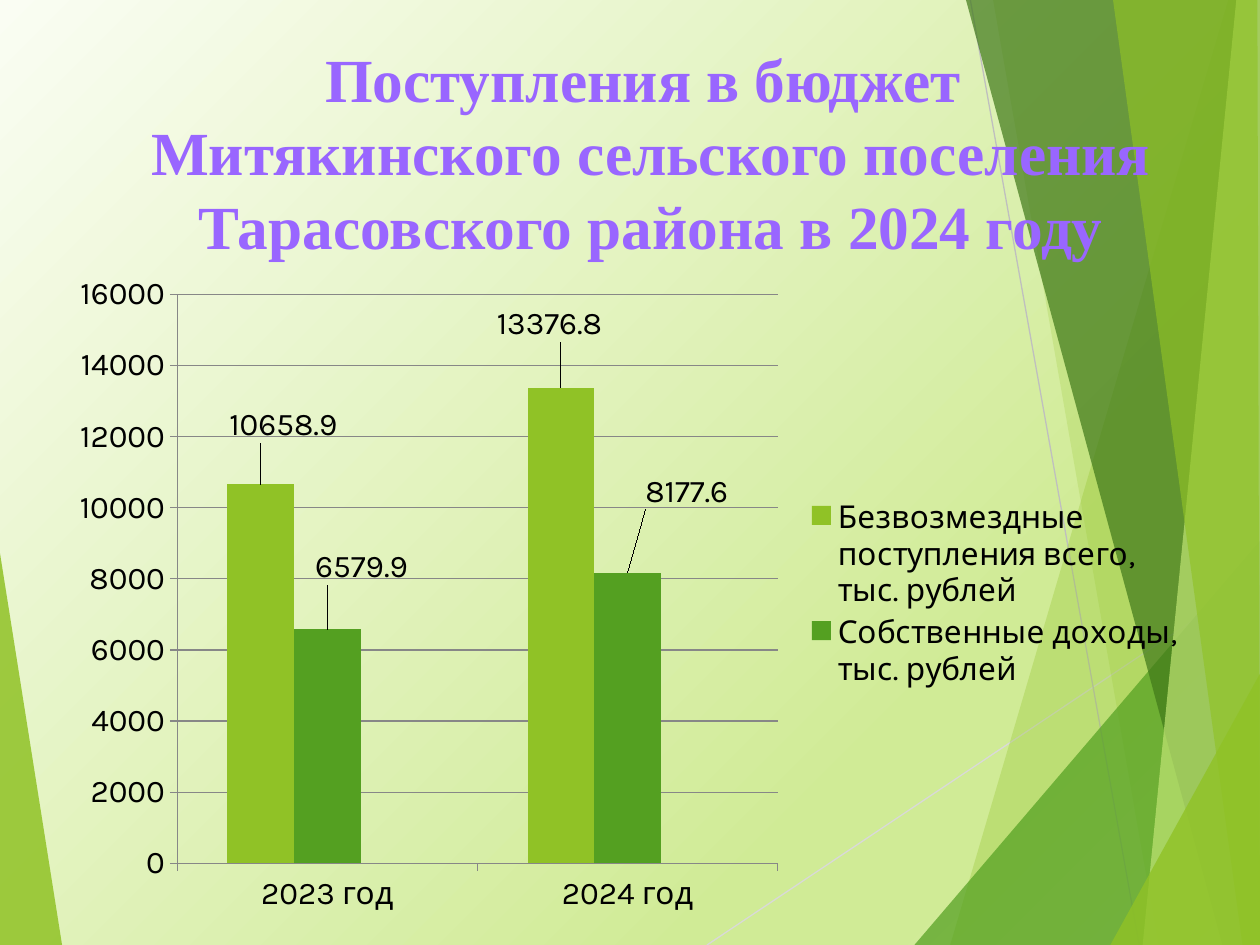
"""Build the slide on budget revenue of the settlement in 2024."""
from copy import deepcopy

from lxml.etree import SubElement
from pptx import Presentation
from pptx.chart.data import CategoryChartData
from pptx.dml.color import RGBColor
from pptx.enum.chart import XL_CHART_TYPE, XL_LABEL_POSITION, XL_LEGEND_POSITION, XL_TICK_MARK
from pptx.enum.text import MSO_ANCHOR, PP_ALIGN
from pptx.oxml import parse_xml
from pptx.oxml.ns import nsdecls, qn
from pptx.util import Pt


def color(value):
    return RGBColor.from_string(value)


def add_text(frame, text, font, size, fill, bold=False, spacing=None):
    para = frame.paragraphs[0] if not frame.text else frame.add_paragraph()
    para.alignment = PP_ALIGN.CENTER
    para.line_spacing = spacing
    span = para.add_run()
    span.text = text
    span.font.name = font
    span.font.size = Pt(size)
    span.font.bold = bold
    span.font.color.rgb = color(fill)


deck = Presentation()
deck.slide_width, deck.slide_height = Pt(720), Pt(540)
page = deck.slides.add_slide(deck.slide_layouts[6])

background = page.background.fill
background.gradient()
background.gradient_angle = 315
stop_list = page._element.xpath(".//a:gsLst")[0]
for extra in range(2):
    stop_list.append(deepcopy(stop_list[0]))
stops = [(0, "FAFDF3"), (0.74, "D0EB96"), (0.83, "D0EB96"), (1, "DFF1B9")]
for stop, (position, fill) in zip(background.gradient_stops, stops):
    stop.position = position
    stop.color.rgb = color(fill)

rays = [((404, 540), (720, 329), "D9D9D9"), ((554.5, 0), (651, 540), "BFBFBF")]
for start, end, fill in rays:
    ray = page.shapes.add_connector(1, *map(Pt, start + end))
    ray.line.color.rgb = color(fill)
    ray.line.width = Pt(0.75)
    SubElement(ray._element.spPr, qn("a:effectLst"))

facets = [
    ([(0, 316), (35.5, 540), (0, 540)], "90C226", 85),
    ([(702, 0), (543, 540), (720, 540), (720, 0)], "90C226", 30),
    ([(567.5, 0), (662, 540), (720, 540), (720, 0)], "90C226", 20),
    ([(522.5, 540), (720, 309), (720, 540)], "54A021", 72),
    ([(552, 0), (698.5, 540), (720, 540), (720, 0)], "3F7819", 70),
    ([(706.5, 0), (653, 540), (720, 540), (720, 0)], "C0E474", 70),
    ([(636, 0), (710, 540), (720, 540), (718.5, 0)], "90C226", 65),
    ([(634.5, 540), (720, 385), (720, 540)], "90C226", 80),
]
for corners, fill, opacity in facets:
    points = [(Pt(x), Pt(y)) for x, y in corners]
    builder = page.shapes.build_freeform(*points[0])
    builder.add_line_segments(points[1:], close=True)
    facet = builder.convert_to_shape()
    facet.shadow.inherit = False
    facet.line.fill.background()
    facet.fill.solid()
    facet.fill.fore_color.rgb = color(fill)
    tone = facet._element.spPr.find(qn("a:solidFill"))[0]
    SubElement(tone, qn("a:alpha"), val=str(opacity * 1000))

box = page.shapes.add_textbox(Pt(48), Pt(18), Pt(648), Pt(90))
title = box.text_frame
title.word_wrap = True
title.vertical_anchor = MSO_ANCHOR.TOP
title.margin_top = Pt(5.5)
for text in ("Поступления в бюджет ",
             "Митякинского сельского поселения Тарасовского района в 2024 году"):
    add_text(title, text, font="Times New Roman", size=35, fill="9966FF",
             bold=True, spacing=Pt(42))

data = CategoryChartData()
data.categories = ["2023 год", "2024 год"]
data.add_series("Безвозмездные поступления всего, тыс. рублей", (10658.9, 13376.8))
data.add_series("Собственные доходы, тыс. рублей", (6579.9, 8177.6))
data.add_series("Series 3", (None, None))
chart = page.shapes.add_chart(XL_CHART_TYPE.COLUMN_CLUSTERED, Pt(33), Pt(150),
                              Pt(651), Pt(379), data).chart
chart.has_title = False
chart.font.name = "Karla"
chart.font.size = Pt(18)
chart.font.color.rgb = color("000000")
chart_space = chart._chartSpace
chart_space.find(qn("c:txPr")).addprevious(parse_xml(
    f"<c:spPr {nsdecls('c', 'a')}><a:noFill/><a:ln><a:noFill/></a:ln></c:spPr>"))

chart.value_axis.minimum_scale = 0
chart.value_axis.maximum_scale = 16000
chart.value_axis.major_unit = 2000
chart.value_axis.has_major_gridlines = True
axes = (chart.category_axis, chart.value_axis)
for axis in axes:
    axis.major_tick_mark = XL_TICK_MARK.OUTSIDE
    axis.tick_labels.number_format = "General"
    axis.tick_labels.number_format_is_linked = False
for line in [axis.format.line for axis in axes] + [chart.value_axis.major_gridlines.format.line]:
    line.color.rgb = color("878787")
    line.width = Pt(0.75)

chart.has_legend = True
legend = chart.legend
legend.position = XL_LEGEND_POSITION.RIGHT
legend.include_in_layout = False
legend._element.insert(1, parse_xml(
    f'<c:legendEntry {nsdecls("c")}><c:idx val="2"/><c:delete val="1"/></c:legendEntry>'))

plot = chart.plots[0]
plot.gap_width = 150
plot.overlap = 0
plot.vary_by_categories = False
layouts = [
    (chart_space.xpath(".//c:plotArea")[0], 0,
     {"layoutTarget": "inner", "xMode": "edge", "yMode": "edge",
      "x": 0.105, "y": 0.048, "w": 0.527, "h": 0.858}),
    (legend._element, 2,
     {"xMode": "edge", "yMode": "edge", "x": 0.655, "y": 0.35, "w": 0.335, "h": 0.3}),
]
label_shifts = [((0.02, -0.054), (-0.01, -0.06)), ((0.03, -0.059), (0.052, -0.087)), ()]
for series, fill, shifts in zip(plot.series, ("90C226", "54A021", "E6B91E"), label_shifts):
    series.format.fill.solid()
    series.format.fill.fore_color.rgb = color(fill)
    series.invert_if_negative = False
    for index, (x, y) in enumerate(shifts):
        label = series.points[index].data_label
        label.position = XL_LABEL_POSITION.OUTSIDE_END
        label.font.name = "Karla"
        label.font.size = Pt(18)
        label.font.color.rgb = color("000000")
        element = series._element.xpath("c:dLbls/c:dLbl")[index]
        layouts.append((element, 1, {"x": x, "y": y}))

for parent, place, settings in layouts:
    for old in parent.findall(qn("c:layout")):
        parent.remove(old)
    layout = parse_xml(f"<c:layout {nsdecls('c')}><c:manualLayout/></c:layout>")
    for name, value in settings.items():
        SubElement(layout[0], qn(f"c:{name}"), val=str(value))
    parent.insert(place, layout)

deck.save("out.pptx")
